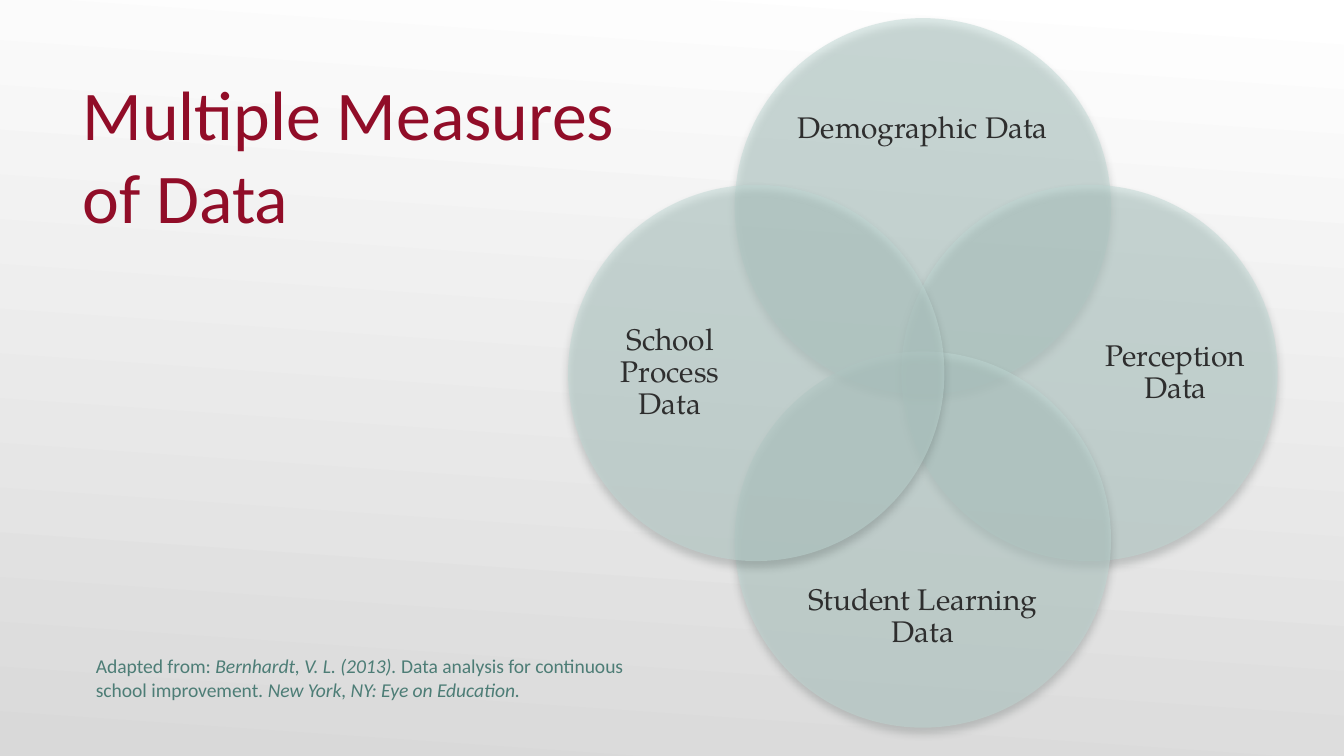
from dataclasses import dataclass

from lxml.etree import SubElement
from pptx import Presentation
from pptx.dml.color import RGBColor
from pptx.enum.shapes import MSO_SHAPE
from pptx.enum.text import MSO_ANCHOR as ANCHOR, MSO_AUTO_SIZE as AUTO, PP_ALIGN as ALIGN
from pptx.oxml.ns import qn
from pptx.util import Inches, Pt

COLUMNS, ROWS = 100, 56.25  # square cells, 16:9
CELL = Inches(10) / COLUMNS


@dataclass(frozen=True)
class Theme:
    title: str = "910D28"
    label: str = "2E2E2E"
    source: str = "4D7D76"
    circle: str = "BED7D3"
    shadow: str = "424C4A"
    sky: str = "FFFFFF"
    ground: str = "D9D9D9"
    sans: str = "Calibri"
    serif: str = "TeX Gyre Pagella"
    title_size: float = 37.4
    label_size: float = 16
    source_size: float = 10.5


def cells(*lengths):
    return [round(n * CELL) for n in lengths]


def add_alpha(color, percent):
    SubElement(color, qn("a:alpha")).set("val", str(percent * 1000))


class VennSlide:
    """Holds the theme and the current slide."""

    def __init__(self, prs, theme):
        self.theme = theme
        self.slide = prs.slides.add_slide(prs.slide_layouts[5])

    def background(self):
        fill = self.slide.background.fill
        fill.gradient()
        fill.gradient_angle = 266
        colors = (self.theme.sky, self.theme.ground)
        for stop, color, position in zip(fill.gradient_stops, colors, (0, 1)):
            stop.color.rgb = RGBColor.from_string(color)
            stop.position = position

    def format_runs(self, p, size, font, color):
        for r in p.runs:
            r.font.size, r.font.name = Pt(size), font
            r.font.color.rgb = RGBColor.from_string(color)

    def frame(self, sp, anchor, margins):
        tf = sp.text_frame
        tf.word_wrap, tf.auto_size, tf.vertical_anchor = True, AUTO.NONE, anchor
        tf.margin_left, tf.margin_top, tf.margin_right, tf.margin_bottom = cells(*margins)
        return tf

    def title(self, text, box):
        sp = self.slide.shapes.title
        sp.left, sp.top, sp.width, sp.height = cells(*box)
        tf = self.frame(sp, ANCHOR.BOTTOM, (0, 0.7, 0, 0))
        tf.text = text
        p = tf.paragraphs[0]
        p.alignment = ALIGN.LEFT
        self.format_runs(p, self.theme.title_size, self.theme.sans, self.theme.title)

    def circle(self, group, x, y, diameter):
        box = cells(x - diameter / 2, y - diameter / 2, diameter, diameter)
        sp = group.shapes.add_shape(MSO_SHAPE.OVAL, *box)
        sp.fill.solid()
        sp.fill.fore_color.rgb = RGBColor.from_string(self.theme.circle)
        sp.line.fill.background()
        props = sp._element.spPr
        add_alpha(props.find(qn("a:solidFill"))[0], 50)
        effects = SubElement(props, qn("a:effectLst"))
        shadow = SubElement(effects, qn("a:outerShdw"), blurRad=str(Pt(4.5)),
                            dist=str(Pt(3)), dir="5400000", rotWithShape="0")
        add_alpha(SubElement(shadow, qn("a:srgbClr"), val=self.theme.shadow), 48)

    def label(self, group, text, x, y, width, height):
        sp = group.shapes.add_textbox(*cells(x - width / 2, y - height / 2, width, height))
        tf = self.frame(sp, ANCHOR.MIDDLE, (0, 0, 0, 0))
        tf.text = text
        p = tf.paragraphs[0]
        p.alignment, p.line_spacing = ALIGN.CENTER, 0.9
        self.format_runs(p, self.theme.label_size, self.theme.serif, self.theme.label)

    def venn(self, center, sets, diameter=28, shift=12.4):
        """Draw each set as (text, x direction, y direction) around the center."""
        group = self.slide.shapes.add_group_shape()
        cx, cy = center
        for text, dx, dy in sets:
            self.circle(group, cx + dx * shift, cy + dy * shift, diameter)
            size = (10.8, 21.5) if dx else (21.5, 8.9)
            self.label(group, text, cx + dx * 18.8, cy + dy * 18.15, *size)

    def source(self, parts, box):
        """Write (text, italic) parts as one paragraph."""
        sp = self.slide.shapes.add_textbox(*cells(*box))
        tf = self.frame(sp, ANCHOR.TOP, (1, 0.5, 1, 0.5))
        tf.auto_size = AUTO.SHAPE_TO_FIT_TEXT
        p = tf.paragraphs[0]
        for text, italic in parts:
            r = p.add_run()
            r.text, r.font.italic = text, italic
        self.format_runs(p, self.theme.source_size, self.theme.sans, self.theme.source)


def main():
    prs = Presentation()
    prs.slide_width, prs.slide_height = cells(COLUMNS, ROWS)
    s = VennSlide(prs, Theme())
    s.background()
    s.title("Multiple Measures of Data", (6.15, 0.8, 43.9, 16.9))
    s.venn((68.67, 27.75), [
        ("Demographic Data", 0, -1),
        ("Perception Data", 1, 0),
        ("Student Learning Data", 0, 1),
        ("School Process Data", -1, 0),
    ])
    s.source([
        ("Adapted from: ", False),
        ("Bernhardt, V. L. (2013). ", True),
        ("Data analysis for continuous school improvement", False),
        (". New York, NY: Eye on Education.", True),
    ], (6.15, 48.2, 44.5, 4.7))
    prs.save("out.pptx")


if __name__ == "__main__":
    main()
